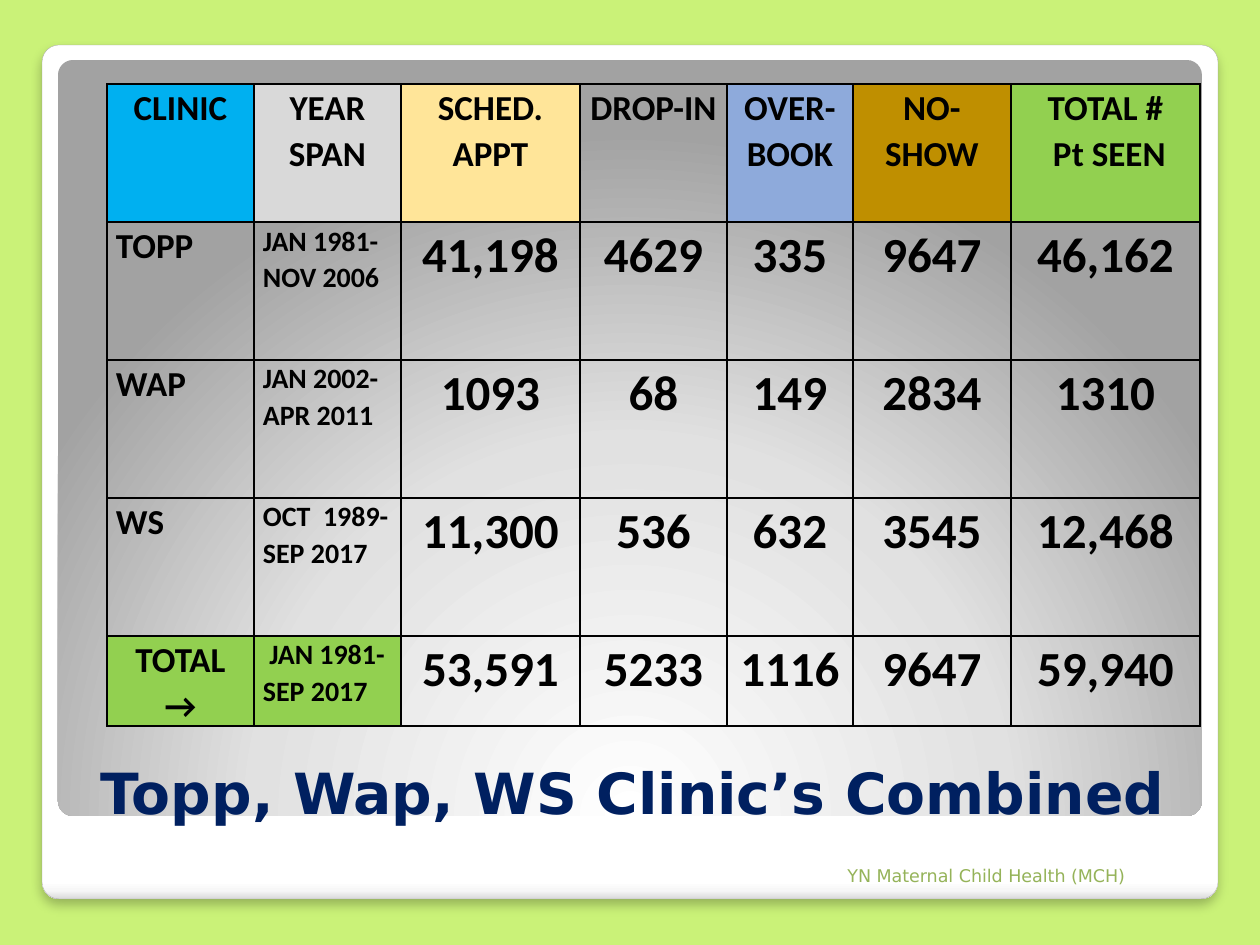
import pptx
import pptx.util
import pptx.dml.color
import pptx.enum.shapes
import pptx.enum.text
import pptx.oxml

PX = 914400 / 126
NS = 'xmlns:a="http://schemas.openxmlformats.org/drawingml/2006/main"'
ALIGN = pptx.enum.text.PP_ALIGN
COLORS = {
    "background": "CAF278", "frame_line": "A4A4A4", "title": "002060", "footer": "95B359",
    "text": "000000", "clinic": "00B0F0", "span": "D9D9D9", "appointments": "FFE599",
    "overbook": "8EAADB", "no_show": "BF8F00", "total": "92D050",
}


def box(*lengths):
    return [round(n * PX) for n in lengths]


def style(p, font, size, color, bold=False):
    for r in p.runs:
        r.font.name = font
        r.font.size = pptx.util.Pt(size)
        r.font.bold = bold
        r.font.color.rgb = pptx.dml.color.RGBColor.from_string(COLORS[color])


prs = pptx.Presentation()
prs.slide_width, prs.slide_height = box(1260, 945)
s = prs.slides.add_slide(prs.slide_layouts[5])
s.background.fill.solid()
s.background.fill.fore_color.rgb = pptx.dml.color.RGBColor.from_string(COLORS["background"])

panels = [
    ((42, 45, 1176, 854), [(0, "FFFFFF"), (98, "FFFFFF"), (99, "F7F7F7"), (100, "DADADA")],
     '<a:lin ang="5400000" scaled="0"/>'),
    ((58, 60, 1144, 756), [(0, "FFFFFF"), (55, "E1E1E1"), (100, "A2A2A2")],
     '<a:path path="circle"><a:fillToRect l="50000" t="175000" r="50000" b="-75000"/></a:path>'),
]
shapes = []
for place, stops, direction in panels:
    sp = s.shapes.add_shape(pptx.enum.shapes.MSO_SHAPE.ROUNDED_RECTANGLE, *box(*place))
    sp.adjustments[0] = 0.02
    sp.shadow.inherit = False
    sp.line.fill.background()
    gs = "".join(f'<a:gs pos="{pos * 1000}"><a:srgbClr val="{c}"/></a:gs>' for pos, c in stops)
    grad = pptx.oxml.parse_xml(
        f'<a:gradFill {NS} rotWithShape="1"><a:gsLst>{gs}</a:gsLst>{direction}</a:gradFill>')
    sp._element.spPr.find(pptx.oxml.ns.qn("a:prstGeom")).addnext(grad)
    shapes.append(sp)

frame = shapes[0]
frame.line.color.rgb = pptx.dml.color.RGBColor.from_string(COLORS["frame_line"])
frame.line.width = pptx.util.Pt(0.16)
effects = frame._element.spPr.find(pptx.oxml.ns.qn("a:effectLst"))
effects.append(pptx.oxml.parse_xml(
    f'<a:outerShdw {NS} blurRad="76200" dist="50800" dir="5400000" algn="t" rotWithShape="0">'
    '<a:srgbClr val="000000"><a:alpha val="25000"/></a:srgbClr></a:outerShdw>'))

title = s.shapes.title
title.left, title.top, title.width, title.height = box(69, 687, 1128, 145)
tf = title.text_frame
tf.text = "Topp, Wap, WS Clinic’s Combined"
tf.auto_size = pptx.enum.text.MSO_AUTO_SIZE.NONE
tf.vertical_anchor = pptx.enum.text.MSO_ANCHOR.BOTTOM
tf.paragraphs[0].alignment = ALIGN.CENTER
style(tf.paragraphs[0], "DejaVu Sans", 32.4, "title", True)
s.shapes._spTree.append(title._element)

footer = s.shapes.add_textbox(*box(835, 842, 315, 50))
tf = footer.text_frame
tf.word_wrap = True
tf.vertical_anchor = pptx.enum.text.MSO_ANCHOR.BOTTOM
tf.text = "YN Maternal Child Health (MCH)"
style(tf.paragraphs[0], "DejaVu Sans", 10, "footer")

rows = [
    ["CLINIC", "YEAR\nSPAN", "SCHED.\nAPPT", "DROP-IN", "OVER-BOOK", "NO-SHOW", "TOTAL #\n Pt SEEN"],
    ["TOPP", "JAN 1981-\nNOV 2006", "41,198", "4629", "335", "9647", "46,162"],
    ["WAP", "JAN 2002-\nAPR 2011", "1093", "68", "149", "2834", "1310"],
    ["WS", "OCT  1989-\nSEP 2017", "11,300", "536", "632", "3545", "12,468"],
    ["TOTAL →", " JAN 1981-\nSEP 2017", "53,591", "5233", "1116", "9647", "59,940"],
]
header_fills = ["clinic", "span", "appointments", None, "overbook", "no_show", "total"]
widths = [147, 147, 179, 147, 126, 158, 189]
heights = [138, 138, 138, 138, 90]
last = len(rows) - 1

table = s.shapes.add_table(len(rows), len(widths), *box(107, 84, sum(widths), sum(heights))).table
table.first_row = False
table.horz_banding = False
for column, width in zip(table.columns, box(*widths)):
    column.width = width
for row, height in zip(table.rows, box(*heights)):
    row.height = height

for i, row in enumerate(rows):
    for j, text in enumerate(row):
        cell = table.cell(i, j)
        cell.margin_left, cell.margin_right, cell.margin_top, cell.margin_bottom = box(9, 9, 0, 0)
        fill = header_fills[j] if i == 0 else "total" if i == last and j < 2 else None
        if fill:
            cell.fill.solid()
            cell.fill.fore_color.rgb = pptx.dml.color.RGBColor.from_string(COLORS[fill])
        else:
            cell.fill.background()
        cell.text_frame.text = text
        size = 20 if i == 0 or j == 0 else 16 if j == 1 else 28
        left = 0 < i and j == 1 or 0 < i < last and j == 0
        for p in cell.text_frame.paragraphs:
            p.alignment = ALIGN.LEFT if left else ALIGN.CENTER
            p.line_spacing = 1.07
            style(p, "Calibri", size, "text", True)
        for k, side in enumerate(["lnL", "lnR", "lnT", "lnB"]):
            cell._tc.tcPr.insert(k, pptx.oxml.parse_xml(
                f'<a:{side} {NS} w="12700"><a:solidFill><a:srgbClr val="{COLORS["text"]}"/>'
                f'</a:solidFill></a:{side}>'))

prs.save("out.pptx")
